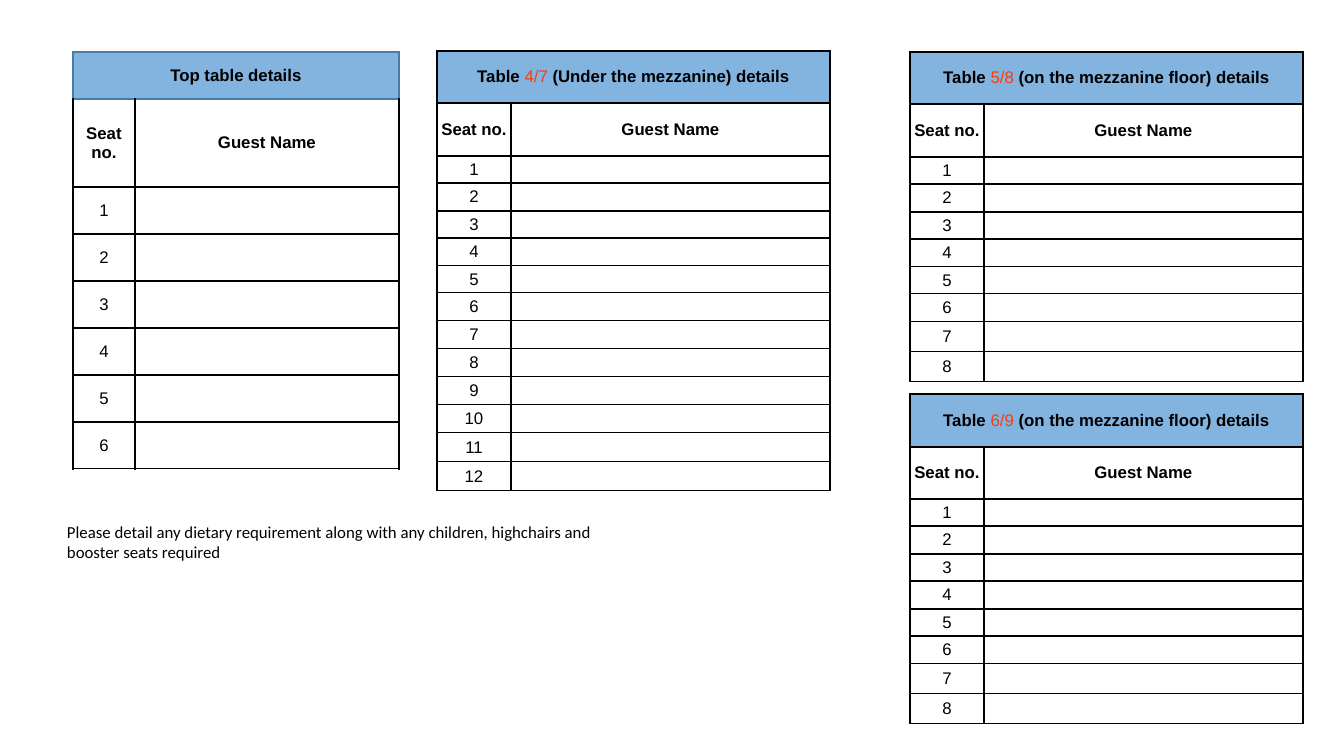
from lxml.etree import SubElement
from pptx import Presentation
from pptx.dml.color import RGBColor
from pptx.enum.text import MSO_ANCHOR, MSO_AUTO_SIZE, PP_ALIGN
from pptx.oxml.ns import qn
from pptx.util import Pt

PX = 9071
BLACK, BLUE, STEEL, RED, WHITE = "000000", "83B3DF", "487CA9", "F53F0E", "FFFFFF"


def add_span(para, text, font="Arial", color=BLACK, bold=False):
    span = para.add_run()
    span.text = text
    span.font.name = font
    span.font.size = Pt(12)
    span.font.bold = bold
    span.font.color.rgb = RGBColor.from_string(color)


def format_cell(cell, fill=None, **borders):
    cell.margin_left = cell.margin_right = cell.margin_top = cell.margin_bottom = 0
    cell.vertical_anchor = MSO_ANCHOR.MIDDLE
    cell.text_frame.paragraphs[0].alignment = PP_ALIGN.CENTER
    properties = cell._tc.get_or_add_tcPr()
    for side in ("L", "R", "T", "B"):
        line = SubElement(properties, qn("a:ln" + side), w=str(Pt(1)))
        solid = SubElement(line, qn("a:solidFill"))
        SubElement(solid, qn("a:srgbClr"), val=borders.get(side, BLACK))
    if fill:
        cell.fill.solid()
        cell.fill.fore_color.rgb = RGBColor.from_string(fill)
    else:
        cell.fill.background()


deck = Presentation()
deck.slide_width, deck.slide_height = 1344 * PX, 756 * PX
page = deck.slides.add_slide(deck.slide_layouts[6])

wide = [74, 319]
compact = [27, 28] * 3
mezzanine = "(on the mezzanine floor) details"
seating = [
    (73, 52, [62, 264], [47, 88] + [47] * 6, STEEL, [("Top table details", BLACK)]),
    (437, 51, wide, [52, 53] + compact + [28] * 4 + [29] * 2, BLACK,
     [("Table ", BLACK), ("4/7 ", RED), ("(Under the mezzanine) details", BLACK)]),
    (910, 52, wide, [52, 53] + compact + [30] * 2, BLACK,
     [("Table ", BLACK), ("5/8 ", RED), (mezzanine, BLACK)]),
    (910, 394, wide, [53, 52] + compact + [30] * 2, BLACK,
     [("Table ", BLACK), ("6/9 ", RED), (mezzanine, BLACK)]),
]

for left, top, widths, heights, edge, title in seating:
    frame = page.shapes.add_table(len(heights), 2, left * PX, top * PX,
                                  sum(widths) * PX, sum(heights) * PX)
    table = frame.table
    table.first_row = table.horz_banding = False
    for column, width in zip(table.columns, widths):
        column.width = width * PX
    for row, height in zip(table.rows, heights):
        row.height = height * PX

    for cell in table.rows[0].cells:
        format_cell(cell, BLUE, L=edge, R=edge, T=edge, B=edge)
    table.cell(0, 0).merge(table.cell(0, 1))
    for text, color in title:
        add_span(table.cell(0, 0).text_frame.paragraphs[0], text,
                 color=color, bold=color == BLACK)

    for cell, text in zip(table.rows[1].cells, ["Seat no.", "Guest Name"]):
        format_cell(cell, T=edge)
        add_span(cell.text_frame.paragraphs[0], text, bold=True)

    for seat in range(1, len(heights) - 1):
        number, guest = table.rows[seat + 1].cells
        format_cell(number)
        format_cell(guest)
        add_span(number.text_frame.paragraphs[0], str(seat))
        SubElement(guest.text_frame.paragraphs[0]._p, qn("a:endParaRPr"), sz="1200")

note = page.shapes.add_textbox(62 * PX, 517 * PX, 549 * PX, 50 * PX)
note.fill.solid()
note.fill.fore_color.rgb = RGBColor.from_string(WHITE)
body = note.text_frame
body.word_wrap = True
body.auto_size = MSO_AUTO_SIZE.SHAPE_TO_FIT_TEXT
body.margin_left = body.margin_right = body.margin_top = body.margin_bottom = 5 * PX
add_span(body.paragraphs[0],
         "Please detail any dietary requirement along with any children, "
         "highchairs and booster seats required", font="Calibri")

deck.save("out.pptx")
